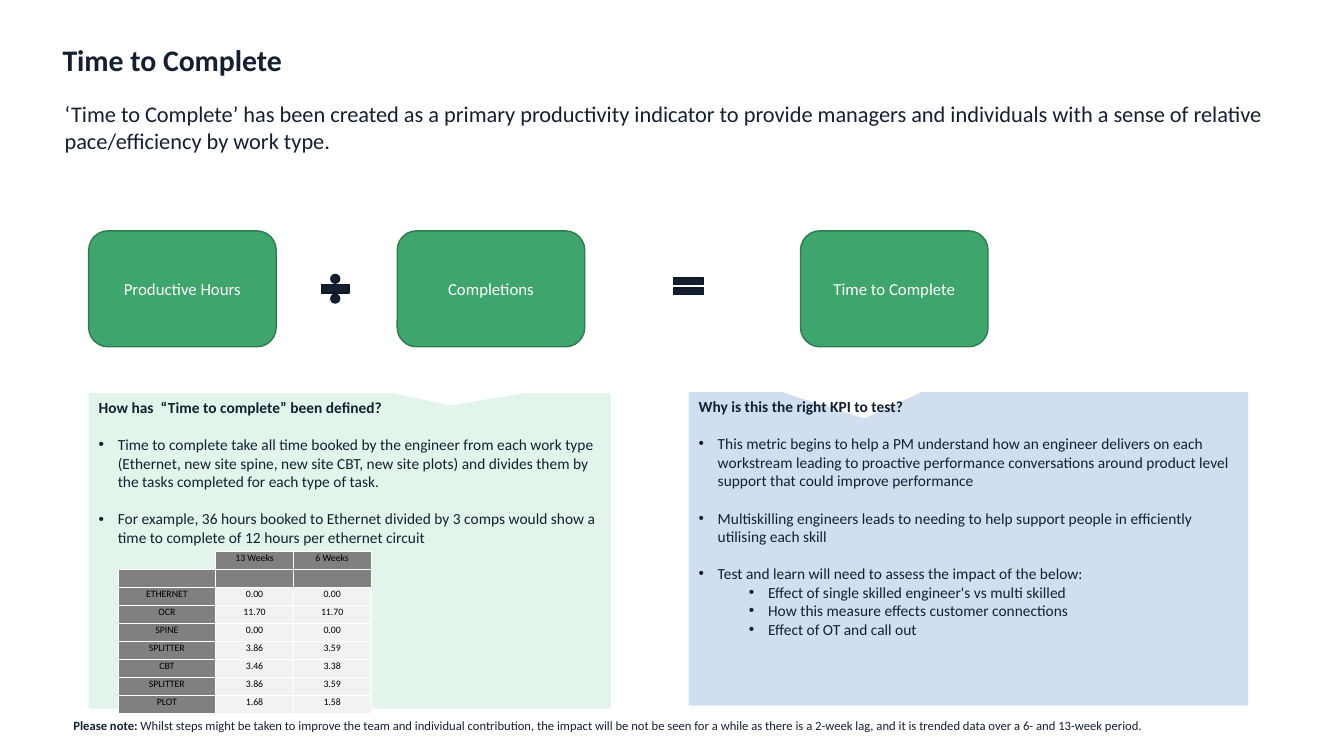
from lxml import etree
from pptx import Presentation
from pptx.dml.color import RGBColor
from pptx.enum.shapes import MSO_SHAPE
from pptx.enum.text import MSO_ANCHOR, MSO_AUTO_SIZE, PP_ALIGN
from pptx.oxml.ns import qn
from pptx.util import Inches, Pt

ROUND = MSO_SHAPE.ROUNDED_RECTANGLE
CALLOUT = MSO_SHAPE.RECTANGULAR_CALLOUT
DIVIDE, EQUAL = MSO_SHAPE.MATH_DIVIDE, MSO_SHAPE.MATH_EQUAL
TOP, MIDDLE, BOTTOM = MSO_ANCHOR.TOP, MSO_ANCHOR.MIDDLE, MSO_ANCHOR.BOTTOM
LEFT, CENTER = PP_ALIGN.LEFT, PP_ALIGN.CENTER
NO_FIT = MSO_AUTO_SIZE.NONE

COLORS = {
    "ink": "142032", "edge": "0F1825", "white": "FFFFFF", "black": "000000",
    "green": "3EA66C", "rim": "2E7B50", "mint": "D6F0E1", "blue": "BBCFE9",
    "grey": "808080", "pale": "F2F2F2",
}

DEFINED = [
    (0, "Time to complete take all time booked by the engineer from each work type "
        "(Ethernet, new site spine, new site CBT, new site plots) and divides them by "
        "the tasks completed for each type of task."),
    (0, "For example, 36 hours booked to Ethernet divided by 3 comps would show a "
        "time to complete of 12 hours per ethernet circuit"),
]
REASONS = [
    (0, "This metric begins to help a PM understand how an engineer delivers on each "
        "workstream leading to proactive performance conversations around product level "
        "support that could improve performance"),
    (0, "Multiskilling engineers leads to needing to help support people in efficiently "
        "utilising each skill"),
    (0, "Test and learn will need to assess the impact of the below:"),
    (1, "Effect of single skilled engineer's vs multi skilled"),
    (1, "How this measure effects customer connections"),
    (1, "Effect of OT and call out"),
]
HOURS = [
    ("", "13 Weeks", "6 Weeks"),
    ("", "", ""),
    ("ETHERNET", "0.00", "0.00"),
    ("OCR", "11.70", "11.70"),
    ("SPINE", "0.00", "0.00"),
    ("SPLITTER", "3.86", "3.59"),
    ("CBT", "3.46", "3.38"),
    ("SPLITTER", "3.86", "3.59"),
    ("PLOT", "1.68", "1.58"),
]


def rgb(name):
    return RGBColor.from_string(COLORS[name])


def place(shape, box):
    shape.left, shape.top, shape.width, shape.height = map(Inches, box)


def bullet(para, level):
    para.level = level
    props = para._p.get_or_add_pPr()
    props.set("marL", str(Inches(0.19 + 0.5 * level)))
    props.set("indent", str(Inches(-0.19)))
    etree.SubElement(props, qn("a:buFont")).set("typeface", "Arial")
    etree.SubElement(props, qn("a:buChar")).set("char", "•")


def border(cell, shown):
    """Draw the sides listed in shown in white and clear the others."""
    props = cell._tc.get_or_add_tcPr()
    for spot, side in enumerate("LRTB"):
        line = etree.Element(qn("a:ln" + side), w=str(Pt(0.5)))
        if side in shown:
            fill = etree.SubElement(line, qn("a:solidFill"))
            etree.SubElement(fill, qn("a:srgbClr")).set("val", COLORS["white"])
        else:
            etree.SubElement(line, qn("a:noFill"))
        props.insert(spot, line)


class Deck:
    """Holds the text style and the slide being filled."""

    def __init__(self):
        self.prs = Presentation()
        self.prs.slide_width, self.prs.slide_height = Inches(13.33), Inches(7.5)
        self.slide = self.prs.slides.add_slide(self.prs.slide_layouts[1])
        self.shapes = self.slide.shapes
        self.face = "Calibri"

    def style(self, para, size, color="ink", bold=False, align=LEFT):
        para.alignment = align
        font = para.font
        font.name, font.size, font.bold = self.face, Pt(size), bold
        font.color.rgb = rgb(color)

    def title(self, text, box):
        shape = self.shapes.title
        place(shape, box)
        frame = shape.text_frame
        frame.text = text
        frame.auto_size, frame.vertical_anchor = NO_FIT, BOTTOM
        para = frame.paragraphs[0]
        para.line_spacing = 0.9
        self.style(para, 21.3, bold=True)

    def intro(self, text, box):
        shape = self.slide.placeholders[1]
        place(shape, box)
        frame = shape.text_frame
        frame.text = text
        frame.auto_size, frame.vertical_anchor = NO_FIT, TOP
        para = frame.paragraphs[0]
        props = para._p.get_or_add_pPr()
        props.set("marL", "0")
        props.set("indent", "0")
        etree.SubElement(props, qn("a:buNone"))
        para.space_before = Pt(0)
        self.style(para, 16)

    def shape(self, kind, box, fill, line=None):
        shape = self.shapes.add_shape(kind, *map(Inches, box))
        shape.shadow.inherit = False
        shape.fill.solid()
        shape.fill.fore_color.rgb = rgb(fill)
        if line:
            shape.line.color.rgb = rgb(line)
            shape.line.width = Pt(1)
        else:
            shape.line.fill.background()
        return shape

    def term(self, text, left):
        frame = self.shape(ROUND, (left, 2.29, 1.86, 1.15), "green", "rim").text_frame
        frame.text = text
        frame.vertical_anchor = MIDDLE
        self.style(frame.paragraphs[0], 12, "white", align=CENTER)

    def panel(self, head, items, box, fill, tip):
        shape = self.shape(CALLOUT, box, fill)
        shape.adjustments[0], shape.adjustments[1] = tip
        tint = shape._element.spPr.find(".//" + qn("a:srgbClr"))
        etree.SubElement(tint, qn("a:alpha")).set("val", "68000")
        frame = shape.text_frame
        frame.text = head
        frame.vertical_anchor = TOP
        self.style(frame.paragraphs[0], 11, bold=True)
        for level, text in items:
            para = frame.add_paragraph()
            para.text = text
            bullet(para, level)
            para.space_before = Pt(0 if level else 13.4)
            self.style(para, 11)

    def table(self, rows, box, widths):
        count = len(rows)
        table = self.shapes.add_table(count, len(widths), *map(Inches, box)).table
        table.first_row = table.horz_banding = False
        for col, width in zip(table.columns, widths):
            col.width = Inches(width)
        for r, row in enumerate(rows):
            table.rows[r].height = Inches(box[3] / count)
            for c, text in enumerate(row):
                self.cell(table.cell(r, c), text, r, c)

    def cell(self, cell, text, r, c):
        cell.text = text
        cell.vertical_anchor = MIDDLE
        cell.margin_left = cell.margin_right = cell.margin_top = Inches(0.01)
        cell.margin_bottom = Inches(0.05)
        para = cell.text_frame.paragraphs[0]
        self.style(para, 7, "black", align=CENTER)
        if not text:
            para._p.get_or_add_endParaRPr().set("sz", "700")
        corner = r == c == 0
        if corner:
            cell.fill.background()
        else:
            cell.fill.solid()
            cell.fill.fore_color.rgb = rgb("grey" if r < 2 or c == 0 else "pale")
        border(cell, "R" if corner else "LRTB")

    def note(self, lead, text, box):
        frame = self.shapes.add_textbox(*map(Inches, box)).text_frame
        frame.word_wrap = True
        para = frame.paragraphs[0]
        self.style(para, 9)
        run = para.add_run()
        run.text = lead
        run.font.bold = True
        para.add_run().text = text


def main():
    deck = Deck()
    deck.title("Time to Complete", (0.52, 0.49, 9.45, 0.33))
    deck.intro("‘Time to Complete’ has been created as a primary productivity indicator to "
               "provide managers and individuals with a sense of relative pace/efficiency "
               "by work type.", (0.54, 0.94, 12.46, 0.64))
    for text, left in (("Productive Hours", 0.88), ("Completions", 3.94),
                       ("Time to Complete", 7.94)):
        deck.term(text, left)
    deck.shape(DIVIDE, (3.14, 2.68, 0.37, 0.37), "ink", "edge")
    deck.shape(EQUAL, (6.63, 2.7, 0.4, 0.28), "ink", "edge")
    deck.panel("How has  “Time to complete” been defined?", DEFINED,
               (0.88, 3.9, 5.18, 3.13), "mint", (0.192, -0.461))
    deck.panel("Why is this the right KPI to test?", REASONS,
               (6.83, 3.89, 5.55, 3.11), "blue", (-0.186, -0.416))
    deck.table(HOURS, (1.17, 5.47, 2.51, 1.56), (0.97, 0.77, 0.77))
    deck.note("Please note: ", "Whilst steps might be taken to improve the team and "
              "individual contribution, the impact will be not be seen for a while as there "
              "is a 2-week lag, and it is trended data over a 6- and 13-week period.",
              (0.63, 7.07, 12.19, 0.25))
    deck.prs.save("out.pptx")


if __name__ == "__main__":
    main()
